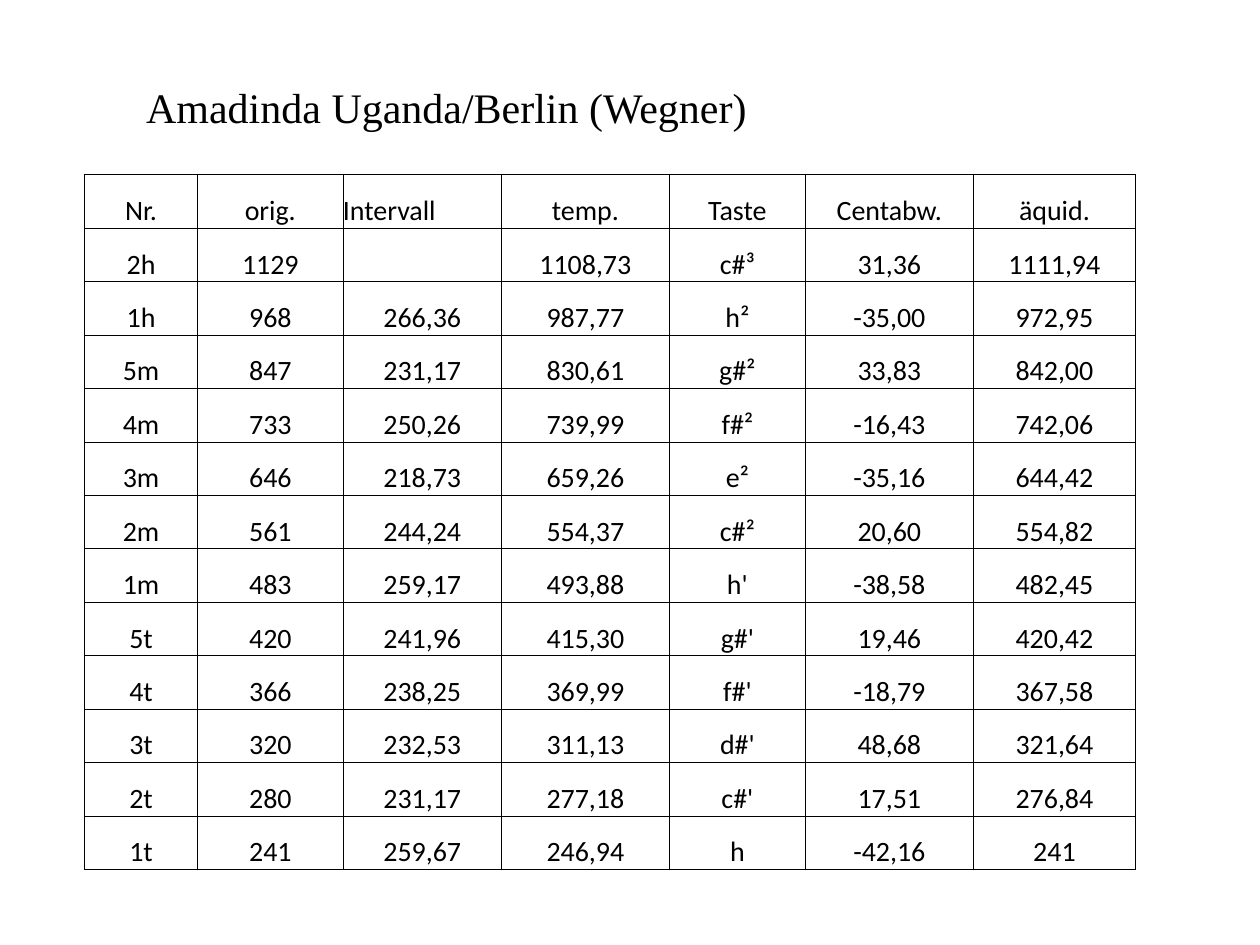
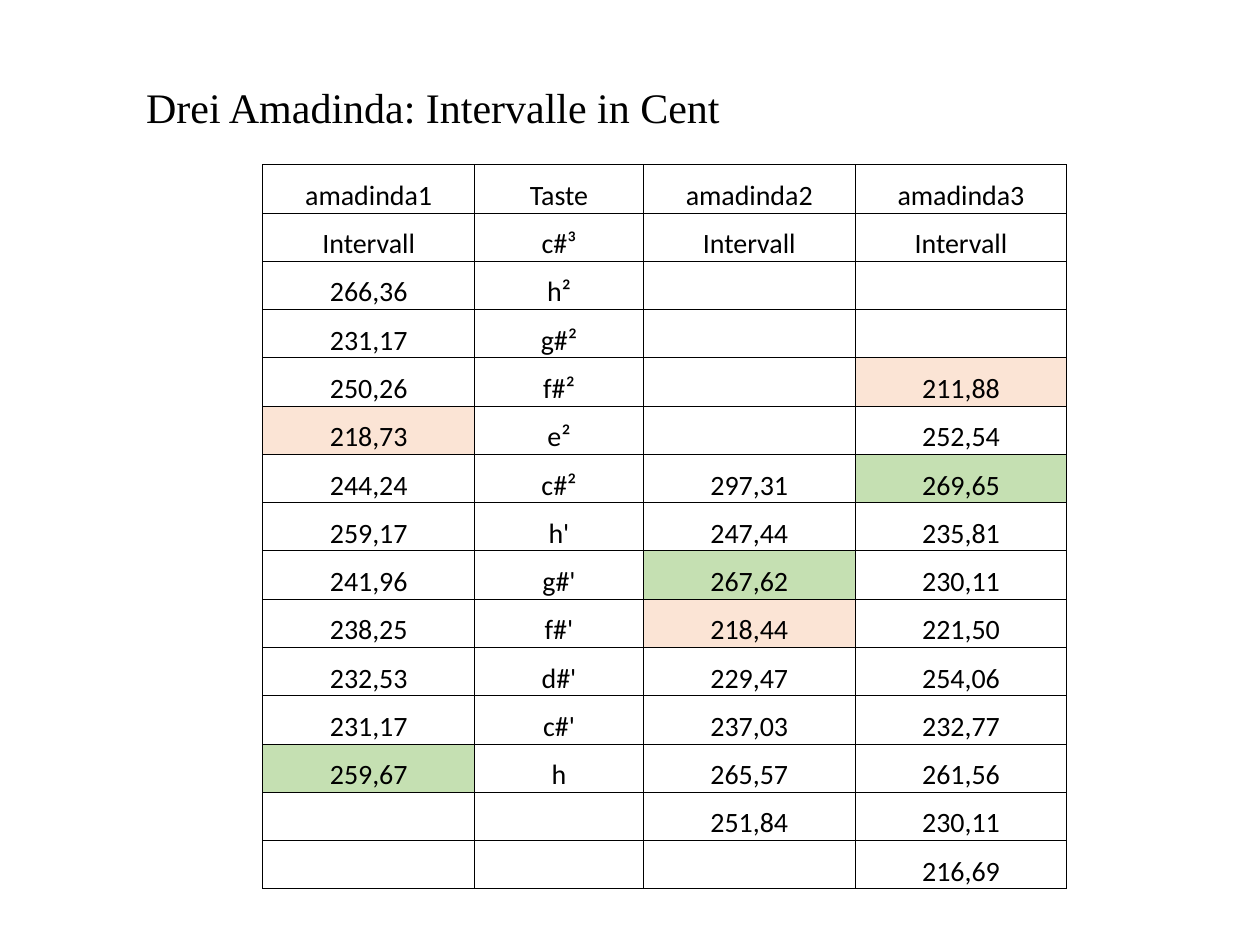
"""Builds two slides of tables with amadinda tunings and intervals."""
from itertools import zip_longest

from lxml.etree import SubElement
from pptx import Presentation
from pptx.dml.color import RGBColor
from pptx.enum.text import MSO_ANCHOR, PP_ALIGN
from pptx.oxml.ns import qn
from pptx.util import Pt

BLACK = RGBColor(0x00, 0x00, 0x00)
PEACH = RGBColor(0xFB, 0xE4, 0xD5)
GREEN = RGBColor(0xC5, 0xE0, 0xB2)
TITLE_FONT, TABLE_FONT = "Times New Roman", "Calibri"

KEYS = ["c#³", "h²", "g#²", "f#²", "e²", "c#²", "h'", "g#'", "f#'", "d#'", "c#'", "h"]
INTERVALS = ["266,36", "231,17", "250,26", "218,73", "244,24", "259,17",
             "241,96", "238,25", "232,53", "231,17", "259,67"]

TABLES = [
    {
        "title": "Amadinda Uganda/Berlin (Wegner)",
        "title_width": 361,
        "left": 48.2, "top": 99.9, "row_height": 30.55,
        "widths": [64.8, 83, 90.6, 95.9, 77.8, 95.9, 92.8],
        "columns": [
            ["Nr.", "2h", "1h", "5m", "4m", "3m", "2m", "1m", "5t", "4t", "3t", "2t", "1t"],
            ["orig.", "1129", "968", "847", "733", "646", "561", "483",
             "420", "366", "320", "280", "241"],
            ["Intervall", "", *INTERVALS],
            ["temp.", "1108,73", "987,77", "830,61", "739,99", "659,26", "554,37",
             "493,88", "415,30", "369,99", "311,13", "277,18", "246,94"],
            ["Taste", *KEYS],
            ["Centabw.", "31,36", "-35,00", "33,83", "-16,43", "-35,16", "20,60",
             "-38,58", "19,46", "-18,79", "48,68", "17,51", "-42,16"],
            ["äquid.", "1111,94", "972,95", "842,00", "742,06", "644,42", "554,82",
             "482,45", "420,42", "367,58", "321,64", "276,84", "241"],
        ],
        "left_aligned": ["Intervall"],
        "highlights": {},
    },
    {
        "title": "Drei Amadinda: Intervalle in Cent",
        "title_width": 351,
        "left": 150.2, "top": 94.1, "row_height": 27.6,
        "widths": [121, 96.5, 121, 121],
        "columns": [
            ["amadinda1", "Intervall", *INTERVALS],
            ["Taste", *KEYS],
            ["amadinda2", "Intervall", "", "", "", "", "297,31", "247,44", "267,62",
             "218,44", "229,47", "237,03", "265,57", "251,84"],
            ["amadinda3", "Intervall", "", "", "211,88", "252,54", "269,65", "235,81",
             "230,11", "221,50", "254,06", "232,77", "261,56", "230,11", "216,69"],
        ],
        "left_aligned": [],
        "highlights": {
            ("amadinda1", "218,73"): PEACH, ("amadinda1", "259,67"): GREEN,
            ("amadinda2", "218,44"): PEACH, ("amadinda2", "267,62"): GREEN,
            ("amadinda3", "211,88"): PEACH, ("amadinda3", "269,65"): GREEN,
        },
    },
]


def add_run(paragraph, text, font_name, size):
    run = paragraph.add_run()
    run.text = text
    run.font.name = font_name
    run.font.size = Pt(size)
    run.font.color.rgb = BLACK


def format_title(title, text, width):
    title.left, title.top, title.width, title.height = Pt(76.3), Pt(43.2), Pt(width), Pt(36)
    frame = title.text_frame
    frame.word_wrap = False
    frame.vertical_anchor = MSO_ANCHOR.TOP
    paragraph = frame.paragraphs[0]
    paragraph.alignment = PP_ALIGN.LEFT
    add_run(paragraph, text, TITLE_FONT, 24)


def add_borders(cell):
    properties = cell._tc.get_or_add_tcPr()
    for side in ("a:lnL", "a:lnR", "a:lnT", "a:lnB"):
        line = SubElement(properties, qn(side), w=str(Pt(0.5)))
        fill = SubElement(line, qn("a:solidFill"))
        SubElement(fill, qn("a:srgbClr"), val=str(BLACK))


def format_cell(cell, text, alignment, fill_color):
    cell.margin_left = cell.margin_right = cell.margin_top = cell.margin_bottom = 0
    cell.vertical_anchor = MSO_ANCHOR.BOTTOM
    add_borders(cell)
    if fill_color:
        cell.fill.solid()
        cell.fill.fore_color.rgb = fill_color
    else:
        cell.fill.background()
    paragraph = cell.text_frame.paragraphs[0]
    paragraph.alignment = alignment
    if text:
        add_run(paragraph, text, TABLE_FONT, 16)


def add_tuning_table(slide, content):
    headers = [column[0] for column in content["columns"]]
    rows = list(zip_longest(*content["columns"], fillvalue=""))
    widths, row_height = content["widths"], content["row_height"]
    table = slide.shapes.add_table(
        len(rows), len(headers), Pt(content["left"]), Pt(content["top"]),
        Pt(sum(widths)), Pt(row_height * len(rows))).table
    table.first_row = table.horz_banding = False
    for column, width in zip(table.columns, widths):
        column.width = Pt(width)
    for row_index, row in enumerate(rows):
        table.rows[row_index].height = Pt(row_height)
        for column_index, (header, text) in enumerate(zip(headers, row)):
            is_left = text in content["left_aligned"]
            format_cell(table.cell(row_index, column_index), text,
                        PP_ALIGN.LEFT if is_left else PP_ALIGN.CENTER,
                        content["highlights"].get((header, text)))


def main():
    presentation = Presentation()
    presentation.slide_width, presentation.slide_height = Pt(720), Pt(540)
    for content in TABLES:
        slide = presentation.slides.add_slide(presentation.slide_layouts[5])
        format_title(slide.shapes.title, content["title"], content["title_width"])
        add_tuning_table(slide, content)
    presentation.save("out.pptx")


if __name__ == "__main__":
    main()
